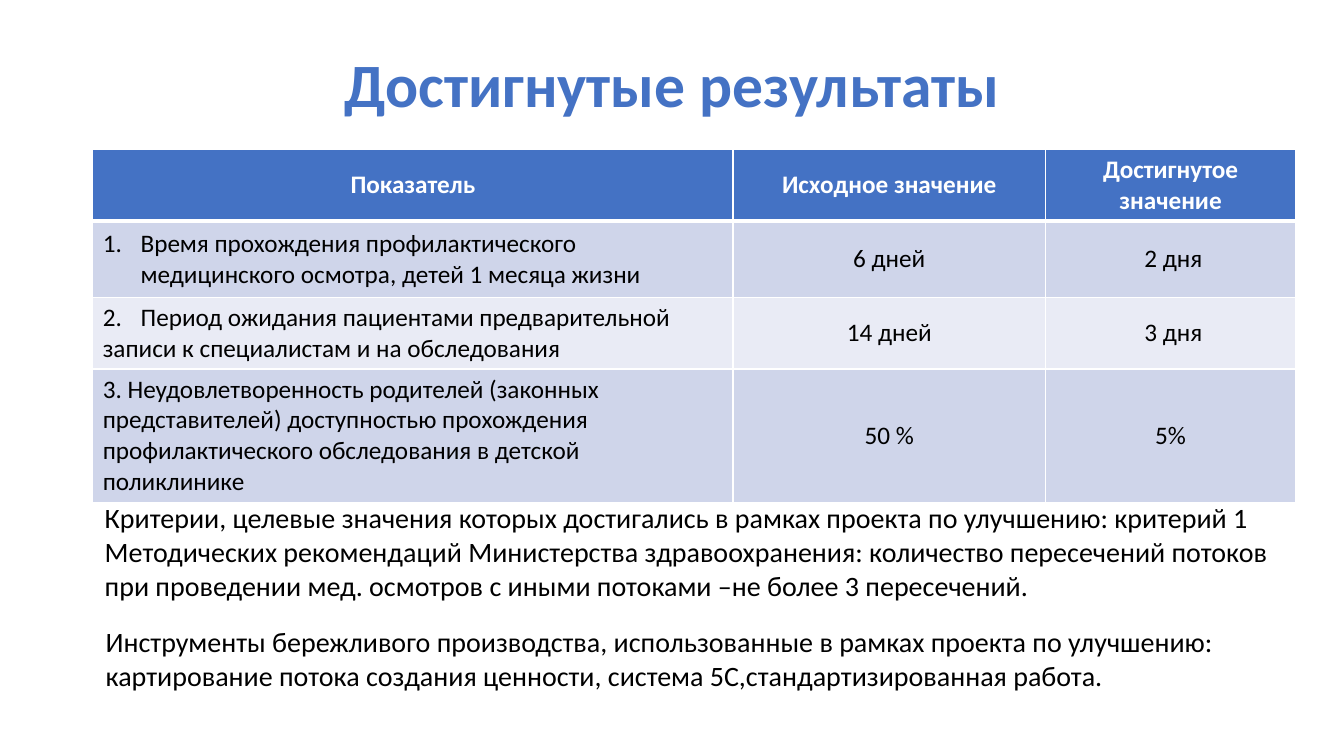
import pptx
import pptx.util
import pptx.dml.color
import pptx.enum.text
import lxml.etree

RGB = pptx.dml.color.RGBColor
BLUE = RGB(0x44, 0x72, 0xC4)
WHITE = RGB(0xFF, 0xFF, 0xFF)
BLACK = RGB(0, 0, 0)
DARK = RGB(0xCF, 0xD5, 0xEA)
PALE = RGB(0xE9, 0xEB, 0xF5)
LEFT = pptx.enum.text.PP_ALIGN.LEFT
MID = pptx.enum.text.PP_ALIGN.CENTER
CELL = pptx.enum.text.MSO_ANCHOR.MIDDLE
GROW = pptx.enum.text.MSO_AUTO_SIZE.SHAPE_TO_FIT_TEXT

HEADS = ["Показатель", "Исходное значение", "Достигнутое значение"]
ROWS = [
    [["Время прохождения профилактического медицинского осмотра, детей 1 месяца жизни"],
     "6 дней", " 2 дня"],
    [["Период ожидания пациентами предварительной",
      "записи к специалистам и на обследования"],
     "14 дней", " 3 дня"],
    [["3. Неудовлетворенность родителей (законных представителей) доступностью "
      "прохождения профилактического обследования в детской поликлинике"],
     "50 %", "5%"],
]
GOALS = ("Критерии, целевые значения которых достигались в рамках проекта по улучшению: "
         "критерий 1 Методических рекомендаций Министерства здравоохранения: количество "
         "пересечений потоков при проведении мед. осмотров с иными потоками –не более "
         "3 пересечений.")
TOOLS = ("Инструменты бережливого производства, использованные в рамках проекта по улучшению: "
         "картирование потока создания ценности, система 5C,стандартизированная работа.")


class Deck:
    face = "Calibri"
    wide, high = 13.33, 7.5
    cols, rows = 133.3, 75

    def __init__(self):
        self.file = pptx.Presentation()
        self.file.slide_width = pptx.util.Inches(self.wide)
        self.file.slide_height = pptx.util.Inches(self.high)
        self.slide = self.file.slides.add_slide(self.file.slide_layouts[5])

    def x(self, n):
        return pptx.util.Inches(self.wide * n / self.cols)

    def y(self, n):
        return pptx.util.Inches(self.high * n / self.rows)

    def area(self, box):
        return self.x(box[0]), self.y(box[1]), self.x(box[2]), self.y(box[3])

    def put(self, frame, lines, size, color, bold=False, align=LEFT):
        look = {"name": self.face, "size": pptx.util.Pt(size), "bold": bold}
        for i, line in enumerate(lines):
            para = frame.paragraphs[0] if i == 0 else frame.add_paragraph()
            para.alignment = align
            run = para.add_run()
            run.text = line
            for key, value in look.items():
                setattr(run.font, key, value)
            run.font.color.rgb = color

    def title(self, text, box):
        shape = self.slide.shapes.title
        for key, value in zip(("left", "top", "width", "height"), self.area(box)):
            setattr(shape, key, value)
        frame = shape.text_frame
        frame.vertical_anchor = CELL
        self.put(frame, [text], 44, BLUE, True, MID)
        frame.paragraphs[0].line_spacing = 0.9

    def note(self, text, box):
        frame = self.slide.shapes.add_textbox(*self.area(box)).text_frame
        frame.word_wrap = True
        frame.auto_size = GROW
        self.put(frame, [text], 20, BLACK)

    def edge(self, cell, sides):
        props = cell._tc.get_or_add_tcPr()
        for side, width in sides.items():
            line = lxml.etree.SubElement(props, pptx.oxml.ns.qn("a:ln" + side),
                                         w=str(pptx.util.Pt(width)))
            fill = lxml.etree.SubElement(line, pptx.oxml.ns.qn("a:solidFill"))
            lxml.etree.SubElement(fill, pptx.oxml.ns.qn("a:srgbClr"), val=str(WHITE))

    def hang(self, para, start=None):
        props = para._p.get_or_add_pPr()
        step = self.x(3.75)
        props.set("marL", str(step))
        props.set("indent", str(-step))
        if start:
            mark = lxml.etree.SubElement(props, pptx.oxml.ns.qn("a:buAutoNum"),
                                         type="arabicPeriod")
            if start > 1:
                mark.set("startAt", str(start))

    def table(self, heads, body, box, wides, highs):
        grid = self.slide.shapes.add_table(len(body) + 1, len(heads), *self.area(box)).table
        for col, wide in zip(grid.columns, wides):
            col.width = self.x(wide)
        for row, high in zip(grid.rows, highs):
            row.height = self.y(high)
        for r, line in enumerate([heads] + body):
            for c, text in enumerate(line):
                cell = grid.cell(r, c)
                cell.vertical_anchor = CELL
                self.edge(cell, {"L": 1, "R": 1, "T": 3 if r == 1 else 1,
                                 "B": 3 if r == 0 else 1})
                cell.fill.solid()
                cell.fill.fore_color.rgb = BLUE if r == 0 else DARK if r % 2 else PALE
                lines = [text] if isinstance(text, str) else text
                self.put(cell.text_frame, lines, 18, BLACK if r else WHITE, r == 0,
                         LEFT if r and c == 0 else MID)
        for r in (1, 2):
            for i, para in enumerate(grid.cell(r, 0).text_frame.paragraphs):
                self.hang(para, None if i else r)


def main():
    deck = Deck()
    deck.title("Достигнутые результаты", (9.2, 4, 115, 9.3))
    deck.table(HEADS, ROWS, (9.2, 14.8, 119.3, 34.6),
               (63.5, 31, 24.8), (6.3, 7.6, 6.3, 9))
    deck.note(GOALS, (9.4, 49.2, 118.1, 11.1))
    deck.note(TOOLS, (9.5, 61.5, 115, 7.7))
    deck.file.save("out.pptx")


if __name__ == "__main__":
    main()
